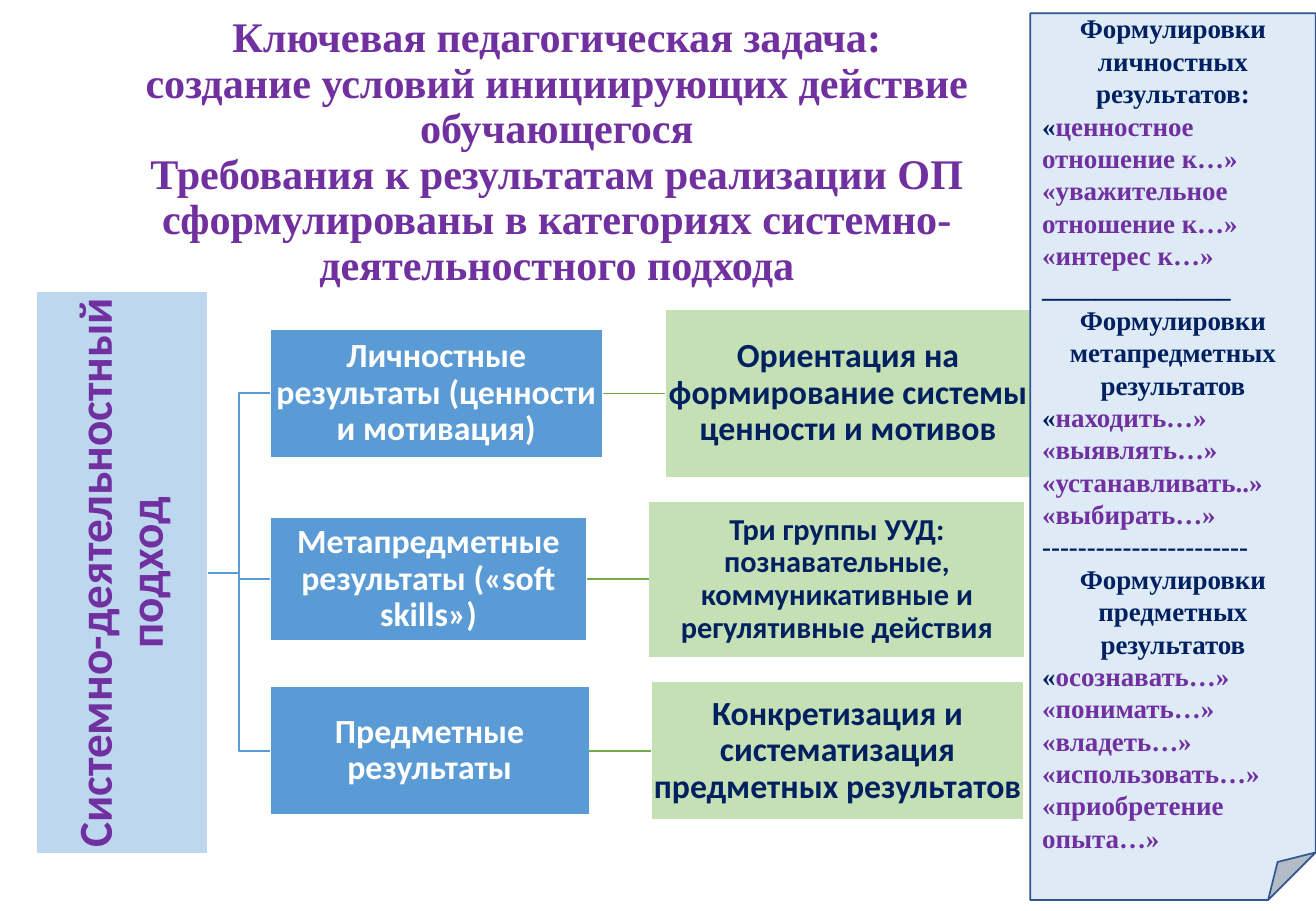
from lxml import etree
from pptx import Presentation
from pptx.dml.color import RGBColor
from pptx.enum.shapes import MSO_CONNECTOR as Link, MSO_SHAPE as Shape
from pptx.enum.text import MSO_ANCHOR as Anchor, PP_ALIGN as Align
from pptx.oxml.ns import qn
from pptx.util import Pt

# Content
TITLE = ("Ключевая педагогическая задача:\n"
         "создание условий инициирующих действие обучающегося\n"
         "Требования к результатам реализации ОП сформулированы "
         "в категориях системно-деятельностного подхода")
APPROACH = "Системно-деятельностный подход"
# Row centre, link colour, then (text, left, width, height, font size) of both boxes
ROWS = [
    (233.2, "green",
     ("Личностные результаты (ценности и мотивация)", 160, 197.3, 76.3, 20),
     ("Ориентация на формирование системы ценности и мотивов", 394, 217.4, 100, 20)),
    (343.4, "green",
     ("Метапредметные результаты («soft skills»)", 160, 188, 73.4, 20),
     ("Три группы УУД: познавательные, коммуникативные и регулятивные действия",
      384.5, 223.2, 92.9, 18)),
    (445, "green",
     ("Предметные результаты", 160, 189.4, 76.3, 20),
     ("Конкретизация и систематизация предметных результатов", 386, 221, 82, 20)),
]
# Heading, phrases, divider below
WORDINGS = [
    ("Формулировки личностных результатов:",
     ["«ценностное отношение к…»", "«уважительное отношение к…»", "«интерес к…»"],
     "______________"),
    ("Формулировки метапредметных результатов",
     ["«находить…»", "«выявлять…»", "«устанавливать..»", "«выбирать…»"],
     "-----------------------"),
    ("Формулировки предметных результатов",
     ["«осознавать…»", "«понимать…»", "«владеть…»", "«использовать…»",
      "«приобретение опыта…»"], None),
]
COLORS = {"purple": "7030A0", "navy": "002060", "white": "FFFFFF", "blue": "5B9BD5",
          "pale_blue": "BDD7EE", "green": "70AD47", "pale_green": "C5E0B4",
          "note": "DEEBF7", "note_line": "325491"}
SERIF, SANS = "Times New Roman", "Calibri"


def color(name):
    return RGBColor.from_string(COLORS[name])


def style(span, font, size, ink):
    span.font.name, span.font.size, span.font.bold = font, Pt(size), True
    span.font.color.rgb = color(ink)


def set_frame(frame, side, edge):
    frame.word_wrap = True
    frame.vertical_anchor = Anchor.MIDDLE
    frame.margin_left = frame.margin_right = Pt(side)
    frame.margin_top = frame.margin_bottom = Pt(edge)


def fill_paragraph(para, text, font, size, ink):
    para.text = text
    para.alignment, para.line_spacing = Align.CENTER, 0.9
    for span in para.runs:
        style(span, font, size, ink)


def add_box(kind, left, top, width, height, fill, line):
    box = slide.shapes.add_shape(kind, Pt(left), Pt(top), Pt(width), Pt(height))
    box.shadow.inherit = False
    box.fill.solid()
    box.fill.fore_color.rgb = color(fill)
    box.line.color.rgb, box.line.width = color(line), Pt(1)
    return box


def add_label(text, left, middle, width, height, size, fill, ink, margin=0.7):
    box = add_box(Shape.RECTANGLE, left, middle - height / 2, width, height, fill, "white")
    set_frame(box.text_frame, margin, margin)
    fill_paragraph(box.text_frame.paragraphs[0], text, SANS, size, ink)
    return box


def join(kind, start, end, ink):
    link = slide.shapes.add_connector(kind, 0, 0, 0, 0)
    link.begin_connect(start, 3)
    link.end_connect(end, 1)
    link.line.color.rgb, link.line.width = color(ink), Pt(1)
    etree.SubElement(link._element.spPr, qn("a:effectLst"))


deck = Presentation()
deck.slide_width, deck.slide_height = Pt(780), Pt(540)
slide = deck.slides.add_slide(deck.slide_layouts[6])

# Title
title = slide.shapes.add_textbox(Pt(38), Pt(8.7), Pt(584), Pt(164))
set_frame(title.text_frame, 7.2, 0)
fill_paragraph(title.text_frame.paragraphs[0], TITLE, SERIF, 25, "purple")

# Approach, read from bottom to top
approach = add_label(APPROACH, 21.2, 339.5, 102.2, 333.4, 28, "pale_blue", "purple", 1.4)
approach.text_frame._txBody.bodyPr.set("vert", "vert270")

# Result rows with their links
for middle, link_ink, (text, left, *extent), (goal_text, goal_left, *goal_extent) in ROWS:
    result = add_label(text, left, middle, *extent, "blue", "white")
    goal = add_label(goal_text, goal_left, middle, *goal_extent, "pale_green", "navy")
    join(Link.ELBOW, approach, result, "blue")
    join(Link.STRAIGHT, result, goal, link_ink)

# Folded note with wordings
note = add_box(Shape.FOLDED_CORNER, 610.6, 7.9, 169.2, 525.6, "note", "note_line")
set_frame(note.text_frame, 7.2, 3.6)
lines = []
for heading, phrases, divider in WORDINGS:
    lines.append((Align.CENTER, [(heading, "navy")]))
    lines.append((Align.LEFT, [(phrases[0][0], "navy"), (phrases[0][1:], "purple")]))
    lines += [(Align.LEFT, [(phrase, "purple")]) for phrase in phrases[1:]]
    if divider:
        lines.append((Align.LEFT, [(divider, "navy")]))
for index, (alignment, spans) in enumerate(lines):
    frame = note.text_frame
    para = frame.add_paragraph() if index else frame.paragraphs[0]
    para.alignment = alignment
    for text, ink in spans:
        span = para.add_run()
        span.text = text
        style(span, SERIF, 16, ink)

deck.save("out.pptx")
